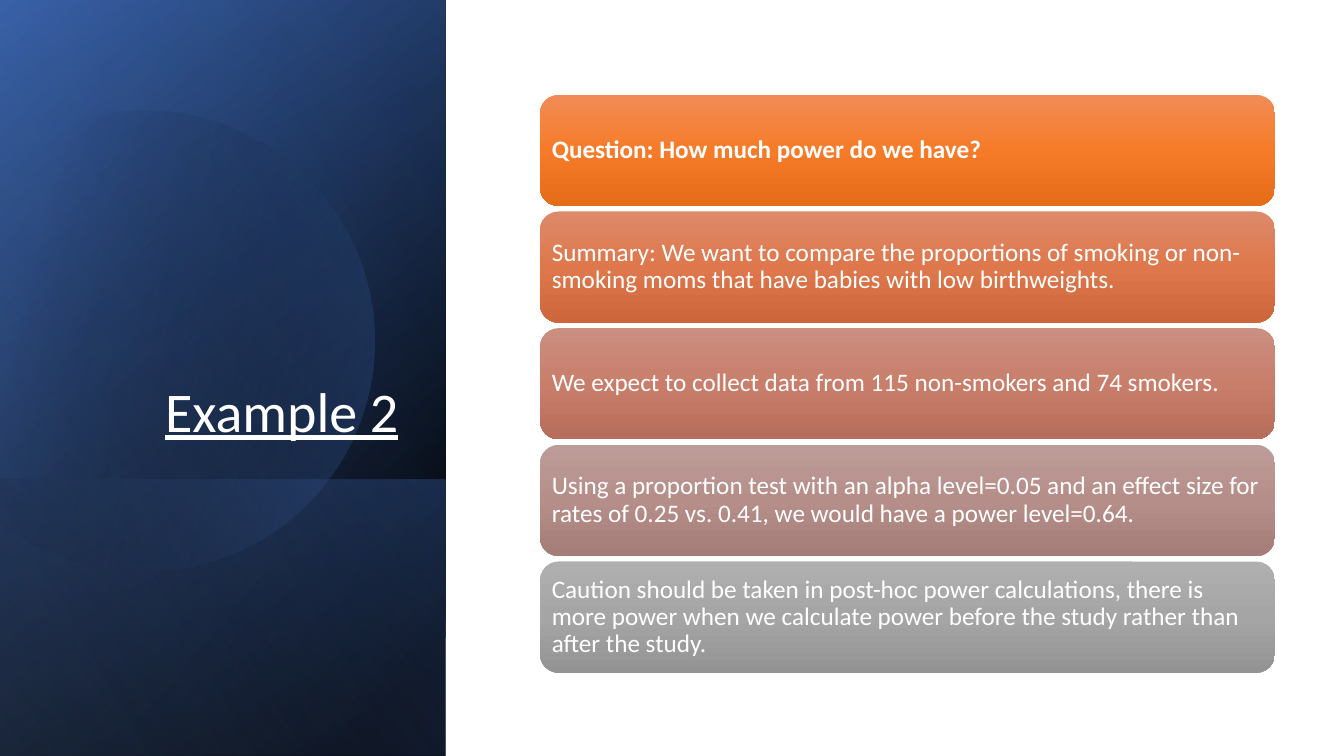
import math

import lxml.etree
import pptx
import pptx.dml.color
import pptx.enum.shapes
import pptx.enum.text
import pptx.oxml.ns
import pptx.util

Cm = pptx.util.Cm
Shape = pptx.enum.shapes.MSO_SHAPE
Align = pptx.enum.text.PP_ALIGN
Anchor = pptx.enum.text.MSO_ANCHOR

HEADING = "Example 2"
CARDS = [
    ("Question: How much power do we have?", True),
    ("Summary: We want to compare the proportions of smoking or non-smoking moms "
     "that have babies with low birthweights.", False),
    ("We expect to collect data from 115 non-smokers and 74 smokers.", False),
    ("Using a proportion test with an alpha level=0.05 and an effect size for rates "
     "of 0.25 vs. 0.41, we would have a power level=0.64.", False),
    ("Caution should be taken in post-hoc power calculations, there is more power "
     "when we calculate power before the study rather than after the study.", False),
]

THEME = {
    "font": "Calibri",
    "text": pptx.dml.color.RGBColor.from_string("FFFFFF"),
    "heading_size": pptx.util.Pt(40),
    "card_size": pptx.util.Pt(18),
    "base": (50, [(8, "000000", 100), (100, "2F5597", 100)]),
    "glow": (30, [(0, "000000", 0), (99, "4472C4", 46)]),
    "foot": (130, [(2, "4472C4", 29), (100, "000000", 30)]),
    "disc": (30, [(29, "000000", 0), (100, "4472C4", 43)]),
    "sheen": (120, [(0, "000000", 0), (99, "8FAADC", 11)]),
    "cards": [
        ("F18C57", "F67B28", "E56C19"),
        ("DD8A6A", "DE774B", "CD673B"),
        ("CB8F81", "C97E6B", "B76D5B"),
        ("BC9C99", "B68E89", "A47C78"),
        ("AFAFAF", "A5A5A5", "939393"),
    ],
}

SLIDE_WIDTH, SLIDE_HEIGHT = 33.87, 19.05
PANEL_WIDTH = 11.23
FOOT_HEIGHT = 6.96
DISC_X, DISC_Y, DISC_RADIUS = 3.61, 8.48, 5.82
DISC_TURN, DISC_HALF_ARC = 16.1, 133.3
CARD_LEFT, CARD_TOP, CARD_WIDTH, CARD_HEIGHT = 13.61, 2.39, 18.52, 2.8
CARD_STEP = 2.94


def apply(target, formats):
    for attribute, value in formats.items():
        setattr(target, attribute, value)


def paint(shape, gradient):
    angle, stops = gradient
    shape.shadow.inherit = False
    shape.line.fill.background()
    shape.fill.gradient()
    shape.fill.gradient_angle = 360 - angle
    qn = pptx.oxml.ns.qn
    stop_list = shape._element.spPr.find(qn("a:gradFill")).find(qn("a:gsLst"))
    for default_stop in list(stop_list):
        stop_list.remove(default_stop)
    for position, color, opacity in stops:
        stop = lxml.etree.SubElement(stop_list, qn("a:gs"), pos=str(position * 1000))
        tint = lxml.etree.SubElement(stop, qn("a:srgbClr"), val=color)
        if opacity < 100:
            lxml.etree.SubElement(tint, qn("a:alpha"), val=str(opacity * 1000))


def write(shape, text, frame_formats, paragraph_formats, font_formats):
    frame = shape.text_frame
    apply(frame, {"word_wrap": True, **frame_formats})
    paragraph = frame.paragraphs[0]
    apply(paragraph, {"line_spacing": 0.9, **paragraph_formats})
    run = paragraph.add_run()
    run.text = text
    apply(run.font, {"name": THEME["font"], **font_formats})
    run.font.color.rgb = THEME["text"]


def add_panel(slide, height, gradient):
    left = (PANEL_WIDTH - height) / 2
    top = SLIDE_HEIGHT - height / 2 - PANEL_WIDTH / 2
    panel = slide.shapes.add_shape(
        Shape.RECTANGLE, Cm(left), Cm(top), Cm(height), Cm(PANEL_WIDTH))
    panel.rotation = 90
    panel._element.spPr.xfrm.set("flipH", "1")
    paint(panel, gradient)


def add_disc(slide):
    steps = 90
    points = []
    for step in range(steps + 1):
        angle = math.radians(DISC_TURN - DISC_HALF_ARC + 2 * DISC_HALF_ARC * step / steps)
        points.append((Cm(DISC_X + DISC_RADIUS * math.cos(angle)),
                       Cm(DISC_Y + DISC_RADIUS * math.sin(angle))))
    outline = slide.shapes.build_freeform(*points[0])
    outline.add_line_segments(points[1:], close=True)
    disc = outline.convert_to_shape()
    disc.rotation = 360 - DISC_TURN
    paint(disc, THEME["disc"])


def add_heading(slide):
    heading = slide.shapes.title
    slide.shapes._spTree.append(heading._element)
    apply(heading, {"left": Cm(1.63), "top": Cm(4.67),
                    "width": Cm(8.66), "height": Cm(6.65)})
    write(heading, HEADING, {"vertical_anchor": Anchor.BOTTOM},
          {"alignment": Align.RIGHT},
          {"size": THEME["heading_size"], "underline": True})


def add_cards(slide):
    for index, ((text, bold), colors) in enumerate(zip(CARDS, THEME["cards"])):
        card = slide.shapes.add_shape(
            Shape.ROUNDED_RECTANGLE, Cm(CARD_LEFT), Cm(CARD_TOP + index * CARD_STEP),
            Cm(CARD_WIDTH), Cm(CARD_HEIGHT))
        paint(card, (90, [(50 * i, color, 100) for i, color in enumerate(colors)]))
        write(card, text,
              {"vertical_anchor": Anchor.MIDDLE,
               "margin_left": Cm(0.16), "margin_right": Cm(0.16),
               "margin_top": Cm(0.16), "margin_bottom": Cm(0.16)},
              {"alignment": Align.LEFT},
              {"size": THEME["card_size"], "bold": bold})


def main():
    deck = pptx.Presentation()
    apply(deck, {"slide_width": Cm(SLIDE_WIDTH), "slide_height": Cm(SLIDE_HEIGHT)})
    slide = deck.slides.add_slide(deck.slide_layouts.get_by_name("Title Only"))
    add_panel(slide, SLIDE_HEIGHT, THEME["base"])
    add_panel(slide, SLIDE_HEIGHT, THEME["glow"])
    add_panel(slide, FOOT_HEIGHT, THEME["foot"])
    add_disc(slide)
    add_panel(slide, SLIDE_HEIGHT, THEME["sheen"])
    add_heading(slide)
    add_cards(slide)
    deck.save("out.pptx")


if __name__ == "__main__":
    main()
